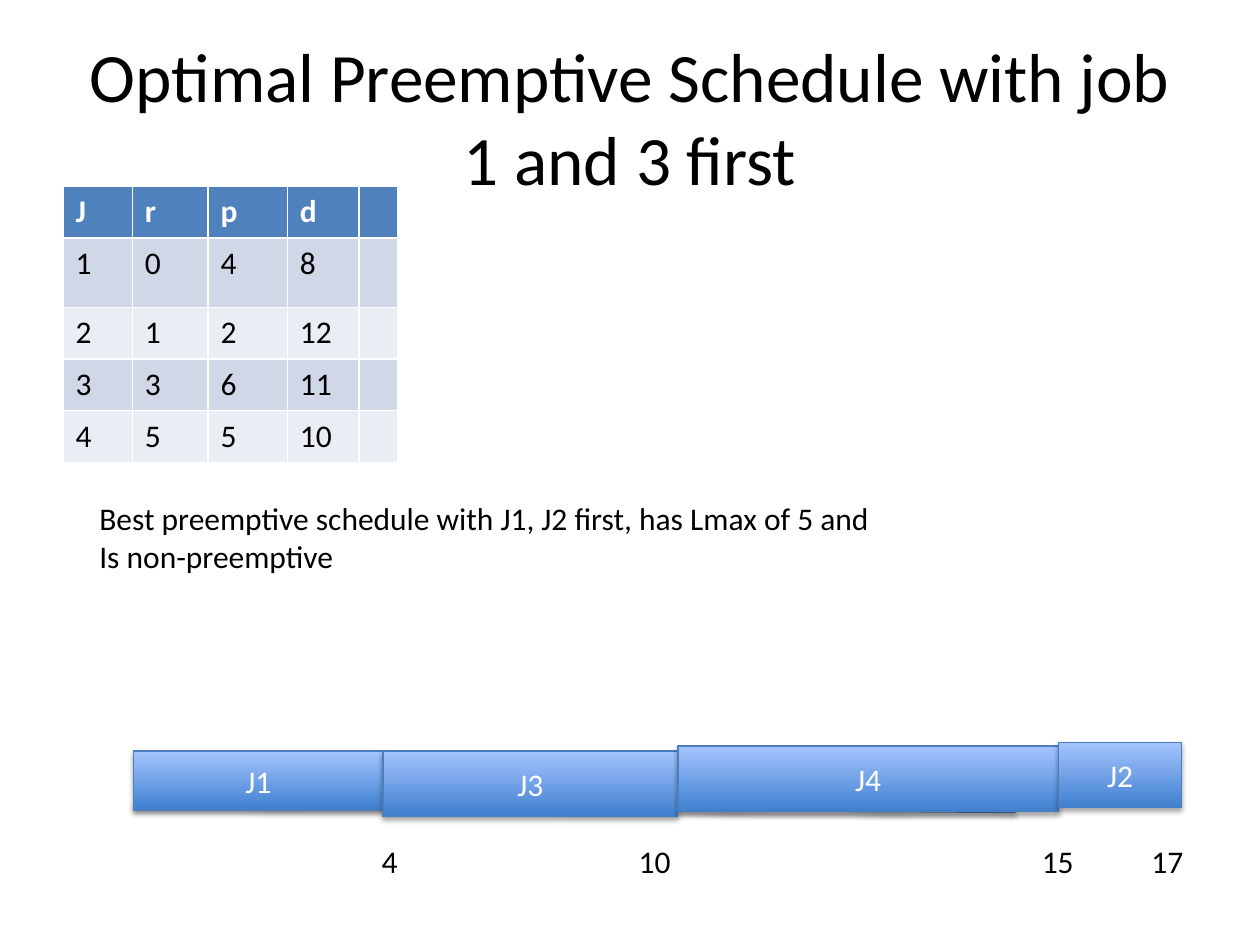
from lxml.etree import SubElement
from pptx import Presentation
from pptx.dml.color import RGBColor
from pptx.enum.shapes import MSO_CONNECTOR, MSO_SHAPE
from pptx.enum.text import MSO_ANCHOR, PP_ALIGN
from pptx.oxml.ns import qn
from pptx.util import Inches, Pt

FONT = "Calibri"
BLACK = RGBColor(0x00, 0x00, 0x00)
WHITE = RGBColor(0xFF, 0xFF, 0xFF)
BLUE = RGBColor(0x4F, 0x81, 0xBD)
BAND_DARK = RGBColor(0xD0, 0xD8, 0xE8)
BAND_LIGHT = RGBColor(0xE9, 0xED, 0xF4)
BAR_BOTTOM = RGBColor(0x3F, 0x80, 0xCE)
BAR_TOP = RGBColor(0xA4, 0xC4, 0xFF)
BAR_LINE = RGBColor(0x4B, 0x7E, 0xBC)

JOBS = [
    ("J", "r", "p", "d", ""),
    ("1", "0", "4", "8", ""),
    ("2", "1", "2", "12", ""),
    ("3", "3", "6", "11", ""),
    ("4", "5", "5", "10", ""),
]
COL_WIDTHS = [0.55, 0.6, 0.63, 0.57, 0.31]
ROW_HEIGHTS = [0.41, 0.55, 0.41, 0.41, 0.41]
BARS = [
    ("J1", 5.96, 1.98, 0.47),
    ("J3", 5.96, 2.34, 0.52),
    ("J4", 5.92, 3.02, 0.52),
    ("J2", 5.89, 0.98, 0.52),
]
TIMES = [("4", 2.93, 0.46), ("10", 4.97, 0.65), ("15", 8.17, 0.46), ("17", 9.04, 0.46)]
SCHEDULE_LEFT = 1.06


def style_text(tf, color, size=18, bold=False, align=None):
    for p in tf.paragraphs:
        p.alignment = align
        for r in p.runs:
            r.font.name = FONT
            r.font.size = Pt(size)
            r.font.bold = bold
            r.font.color.rgb = color


def add_text(slide, text, left, top, width, height, size=18, align=None,
             anchor=MSO_ANCHOR.TOP):
    sp = slide.shapes.add_textbox(Inches(left), Inches(top), Inches(width), Inches(height))
    tf = sp.text_frame
    tf.word_wrap = True
    tf.vertical_anchor = anchor
    tf.text = text
    style_text(tf, BLACK, size, align=align)


def add_shadow(sp, distance, opacity):
    effects = SubElement(sp._element.spPr, qn("a:effectLst"))
    shadow = SubElement(effects, qn("a:outerShdw"), blurRad=str(Pt(3.1)),
                        dist=str(Pt(distance)), dir="5400000", rotWithShape="0")
    color = SubElement(shadow, qn("a:srgbClr"), val="000000")
    SubElement(color, qn("a:alpha"), val=str(opacity * 1000))


def add_job_table(slide, left, top):
    frame = slide.shapes.add_table(
        len(JOBS), len(COL_WIDTHS), Inches(left), Inches(top),
        Inches(sum(COL_WIDTHS)), Inches(sum(ROW_HEIGHTS)))
    table = frame.table
    for col, width in zip(table.columns, COL_WIDTHS):
        col.width = Inches(width)
    for i, (row, height, values) in enumerate(zip(table.rows, ROW_HEIGHTS, JOBS)):
        row.height = Inches(height)
        header = i == 0
        band = BLUE if header else BAND_DARK if i % 2 else BAND_LIGHT
        for cell, value in zip(row.cells, values):
            cell.fill.solid()
            cell.fill.fore_color.rgb = band
            cell.text_frame.text = value
            style_text(cell.text_frame, WHITE if header else BLACK, bold=header)


def add_timeline(slide):
    line = slide.shapes.add_connector(
        MSO_CONNECTOR.STRAIGHT, Inches(SCHEDULE_LEFT), Inches(6.39),
        Inches(8.06), Inches(6.44))
    line.line.color.rgb = BLUE
    line.line.width = Pt(2)
    add_shadow(line, 1.6, 38)


def add_bar(slide, text, left, top, width, height):
    sp = slide.shapes.add_shape(MSO_SHAPE.RECTANGLE, Inches(left), Inches(top),
                                Inches(width), Inches(height))
    sp.fill.gradient()
    sp.fill.gradient_angle = 90
    for stop, color in zip(sp.fill.gradient_stops, (BAR_BOTTOM, BAR_TOP)):
        stop.color.rgb = color
    sp.line.color.rgb = BAR_LINE
    sp.line.width = Pt(0.75)
    add_shadow(sp, 1.8, 35)
    tf = sp.text_frame
    tf.vertical_anchor = MSO_ANCHOR.MIDDLE
    tf.text = text
    style_text(tf, WHITE, align=PP_ALIGN.CENTER)


def main():
    prs = Presentation()
    prs.slide_width, prs.slide_height = Inches(10), Inches(7.5)
    slide = prs.slides.add_slide(prs.slide_layouts[6])

    add_text(slide, "Optimal Preemptive Schedule with job 1 and 3 first",
             0.5, 0.3, 9, 1.25, 39.6, PP_ALIGN.CENTER, MSO_ANCHOR.MIDDLE)
    add_job_table(slide, 0.5, 1.48)
    add_text(slide, "Best preemptive schedule with J1, J2 first, has Lmax of 5 and\n"
             "Is non-preemptive", 0.69, 3.91, 6.39, 1.01)

    add_timeline(slide)
    left = SCHEDULE_LEFT
    for job, top, width, height in BARS:
        add_bar(slide, job, left, top, width, height)
        left += width
    for time, time_left, width in TIMES:
        add_text(slide, time, time_left, 6.63, width, 0.4)

    prs.save("out.pptx")


if __name__ == "__main__":
    main()
